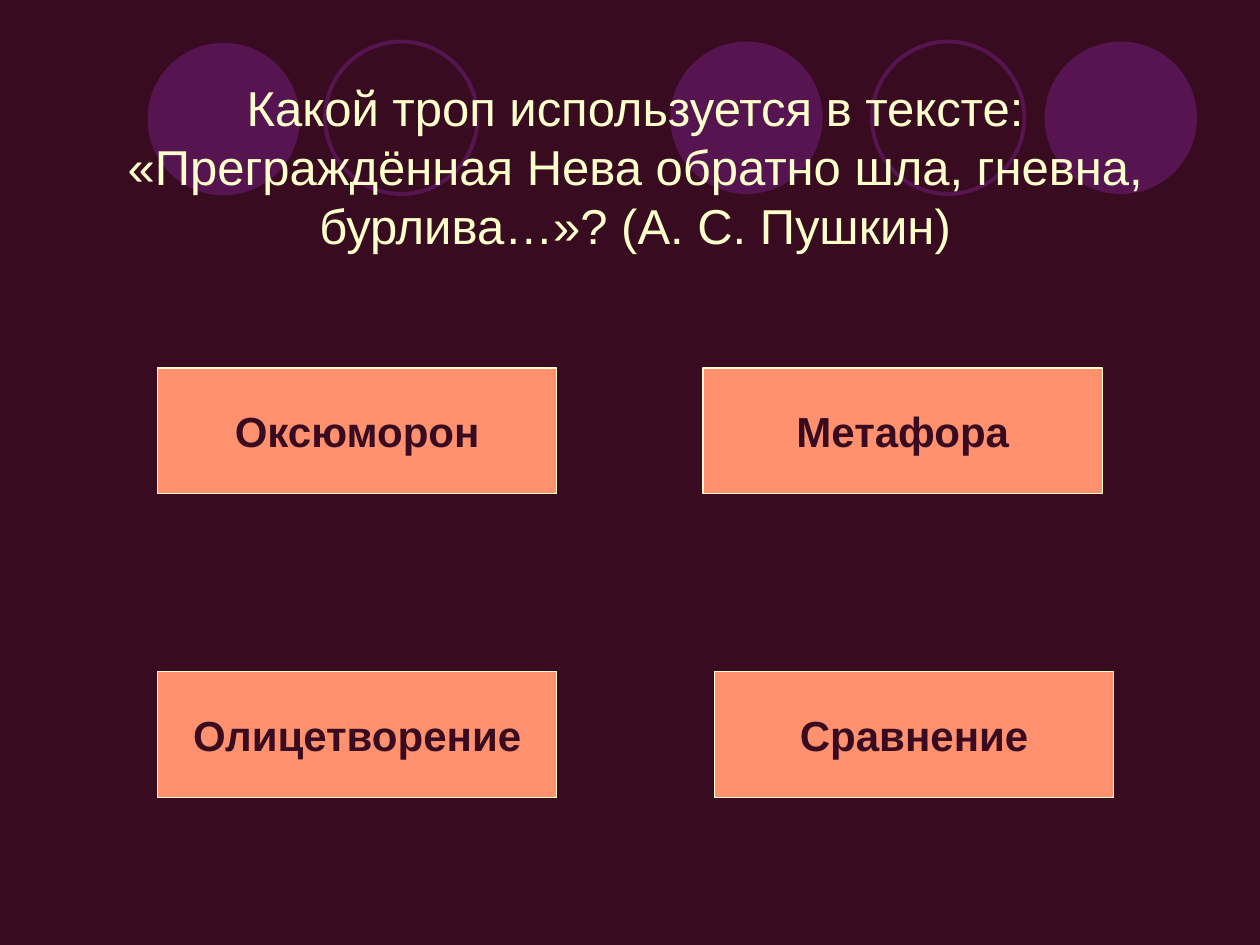
from pptx import Presentation
from pptx.dml.color import RGBColor
from pptx.enum.shapes import MSO_SHAPE as Shape
from pptx.enum.text import MSO_ANCHOR as Anchor, PP_ALIGN as Align
from pptx.util import Inches, Pt

BACKGROUND = "390B20"
PURPLE = "561450"
CREAM = "FFFFCC"
CORAL = "FF916F"

QUESTION = ("Какой троп используется в тексте: «Преграждённая Нева обратно шла, "
            "гневна, бурлива…»? (А. С. Пушкин)")
ANSWERS = [
    ("Оксюморон", 1.25, 2.92),
    ("Метафора", 5.58, 2.92),
    ("Олицетворение", 1.25, 5.33),
    ("Сравнение", 5.67, 5.33),
]
# left, top, filled
CIRCLES = [
    (5.32, 0.33, True),
    (8.29, 0.33, True),
    (1.17, 0.34, True),
    (6.92, 0.33, False),
    (2.58, 0.33, False),
]


def paint(color_format, color):
    color_format.rgb = RGBColor.from_string(color)


def fill_solid(fill, color):
    fill.solid()
    paint(fill.fore_color, color)


def set_text(box, text, size, color, bold=False):
    frame = box.text_frame
    frame.vertical_anchor = Anchor.MIDDLE
    para = frame.paragraphs[0]
    para.text = text
    para.alignment = Align.CENTER
    para.font.name = "Arial"
    para.font.size = Pt(size)
    para.font.bold = bold
    paint(para.font.color, color)


def add_circle(page, left, top, filled):
    circle = page.shapes.add_shape(
        Shape.OVAL, Inches(left), Inches(top), Inches(1.21), Inches(1.21))
    circle.shadow.inherit = False
    if filled:
        fill_solid(circle.fill, PURPLE)
        circle.line.fill.background()
    else:
        circle.fill.background()
        paint(circle.line.color, PURPLE)
        circle.line.width = Pt(2.25)


def add_question(page):
    box = page.shapes.add_textbox(
        Inches(0.5), Inches(0.3), Inches(9.08), Inches(2.03))
    box.text_frame.word_wrap = True
    set_text(box, QUESTION, 28, CREAM)


def add_answer(page, text, left, top):
    box = page.shapes.add_shape(
        Shape.RECTANGLE, Inches(left), Inches(top), Inches(3.17), Inches(1))
    box.shadow.inherit = False
    fill_solid(box.fill, CORAL)
    paint(box.line.color, CREAM)
    box.line.width = Pt(0.75)
    box.text_frame.word_wrap = False
    set_text(box, text, 24, BACKGROUND, bold=True)


def main():
    deck = Presentation()
    deck.slide_width, deck.slide_height = Inches(10), Inches(7.5)
    page = deck.slides.add_slide(deck.slide_layouts[6])
    fill_solid(page.background.fill, BACKGROUND)

    # Decorative circles behind the question
    for circle in CIRCLES:
        add_circle(page, *circle)

    # Question and answer buttons
    add_question(page)
    for answer in ANSWERS:
        add_answer(page, *answer)

    deck.save("out.pptx")


if __name__ == "__main__":
    main()
